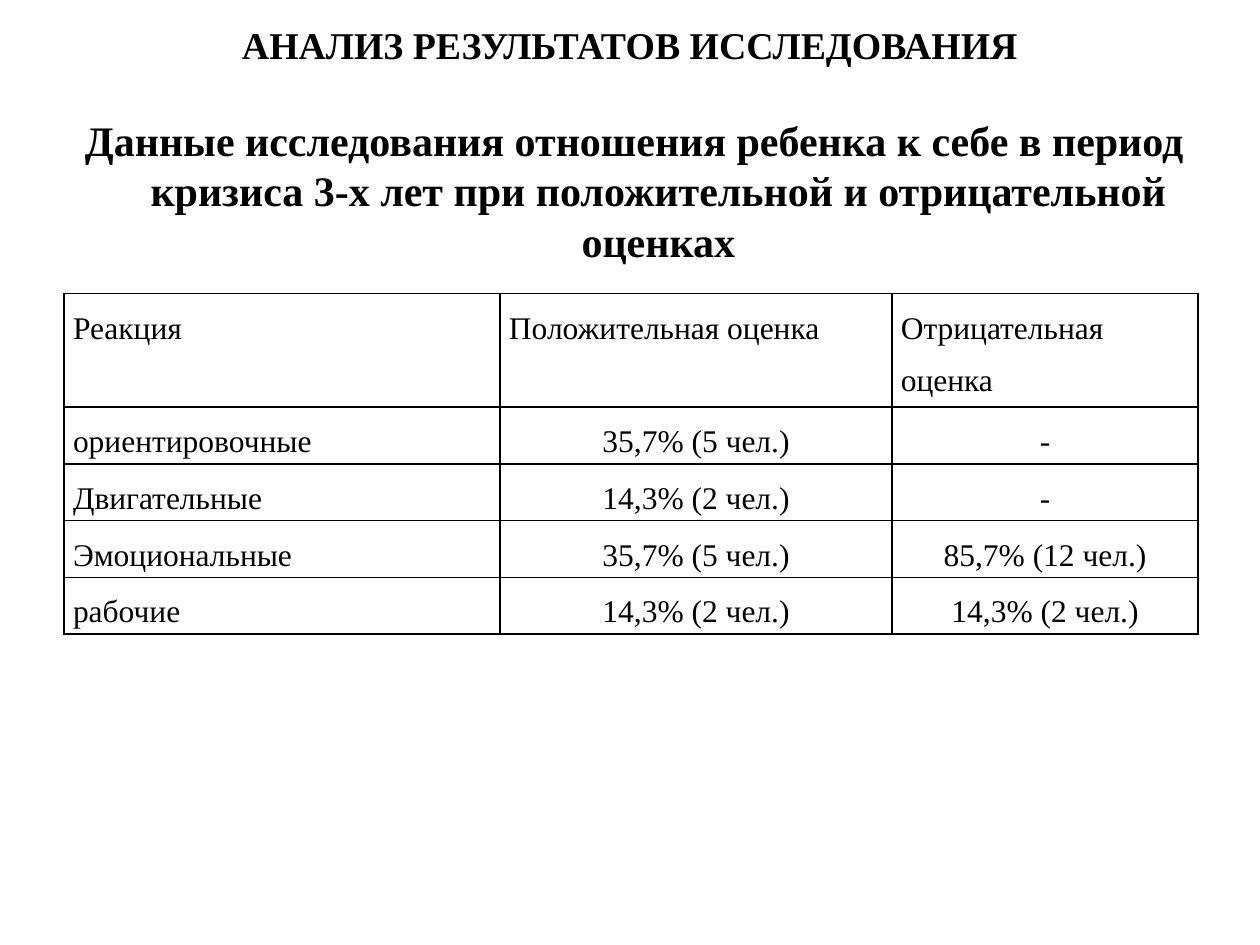
from typing import NamedTuple

import pptx
import pptx.dml.color
import pptx.enum.text
import pptx.oxml
import pptx.oxml.ns
import pptx.util
from pptx.dml.color import RGBColor
from pptx.util import Inches

BLACK = RGBColor(0, 0, 0)
WHITE = RGBColor(255, 255, 255)
FONT = "Times New Roman"
ALIGN = pptx.enum.text.PP_ALIGN
ANCHOR = pptx.enum.text.MSO_ANCHOR


class Reaction(NamedTuple):
    name: str
    positive: str
    negative: str


HEADER = Reaction("Реакция", "Положительная оценка", "Отрицательная оценка")
REACTIONS = [
    Reaction("ориентировочные", "35,7% (5 чел.)", "-"),
    Reaction("Двигательные", "14,3% (2 чел.)", "-"),
    Reaction("Эмоциональные", "35,7% (5 чел.)", "85,7% (12 чел.)"),
    Reaction("рабочие", "14,3% (2 чел.)", "14,3% (2 чел.)"),
]
COLUMN_WIDTHS = [3.46, 3.11, 2.43]
HEADER_HEIGHT, ROW_HEIGHT = 0.83, 0.41


def write_text(frame, text: str, *, size: float, bold: bool = False,
               align=ALIGN.CENTER, spacing: float | None = None,
               hanging: float = 0) -> None:
    """Fill the first paragraph of a text frame."""
    frame.word_wrap = True
    paragraph = frame.paragraphs[0]
    paragraph.alignment = align
    paragraph.line_spacing = spacing
    if hanging:
        properties = paragraph._p.get_or_add_pPr()
        properties.set("marL", str(Inches(hanging)))
        properties.set("indent", str(-Inches(hanging)))
    run = paragraph.add_run()
    run.text = text
    run.font.name = FONT
    run.font.size = pptx.util.Pt(size)
    run.font.bold = bold
    run.font.color.rgb = BLACK


def add_heading(slide, left: float, top: float, width: float, height: float,
                text: str, *, anchor=ANCHOR.TOP, **text_format) -> None:
    box = slide.shapes.add_textbox(
        Inches(left), Inches(top), Inches(width), Inches(height))
    box.text_frame.vertical_anchor = anchor
    write_text(box.text_frame, text, bold=True, **text_format)


def style_cell(cell) -> None:
    """Narrow margins, white fill and a thin black border on every side."""
    cell.margin_left = cell.margin_right = Inches(0.07)
    cell.margin_top = cell.margin_bottom = 0
    properties = cell._tc.get_or_add_tcPr()
    for side in ("lnL", "lnR", "lnT", "lnB"):
        properties.append(pptx.oxml.parse_xml(
            f'<a:{side} {pptx.oxml.ns.nsdecls("a")} w="{pptx.util.Pt(1)}">'
            f'<a:solidFill><a:srgbClr val="{BLACK}"/></a:solidFill></a:{side}>'))
    cell.fill.solid()
    cell.fill.fore_color.rgb = WHITE


def add_reaction_table(slide, left: float, top: float) -> None:
    rows = [HEADER, *REACTIONS]
    height = HEADER_HEIGHT + ROW_HEIGHT * len(REACTIONS)
    table = slide.shapes.add_table(
        len(rows), len(COLUMN_WIDTHS), Inches(left), Inches(top),
        Inches(sum(COLUMN_WIDTHS)), Inches(height)).table
    for column, width in zip(table.columns, COLUMN_WIDTHS):
        column.width = Inches(width)
    for row_index, reaction in enumerate(rows):
        is_header = row_index == 0
        table.rows[row_index].height = Inches(
            HEADER_HEIGHT if is_header else ROW_HEIGHT)
        for column_index, text in enumerate(reaction):
            cell = table.cell(row_index, column_index)
            style_cell(cell)
            is_label = is_header or column_index == 0
            write_text(cell.text_frame, text, size=18, spacing=1.5,
                       align=ALIGN.JUSTIFY if is_label else ALIGN.CENTER)


def main() -> None:
    presentation = pptx.Presentation()
    presentation.slide_width = Inches(10)
    presentation.slide_height = Inches(7.5)
    slide = presentation.slides.add_slide(presentation.slide_layouts[6])

    # Title and table caption
    add_heading(slide, 0.5, 0, 9, 0.7, "АНАЛИЗ РЕЗУЛЬТАТОВ ИССЛЕДОВАНИЯ",
                size=21.6, anchor=ANCHOR.MIDDLE)
    add_heading(slide, 0.23, 0.86, 9.61, 1.32,
                "Данные исследования отношения ребенка к себе в период "
                "кризиса 3-х лет при положительной и отрицательной оценках",
                size=24, hanging=0.38)

    # Reactions by kind of assessment
    add_reaction_table(slide, 0.51, 2.33)

    presentation.save("out.pptx")


if __name__ == "__main__":
    main()
